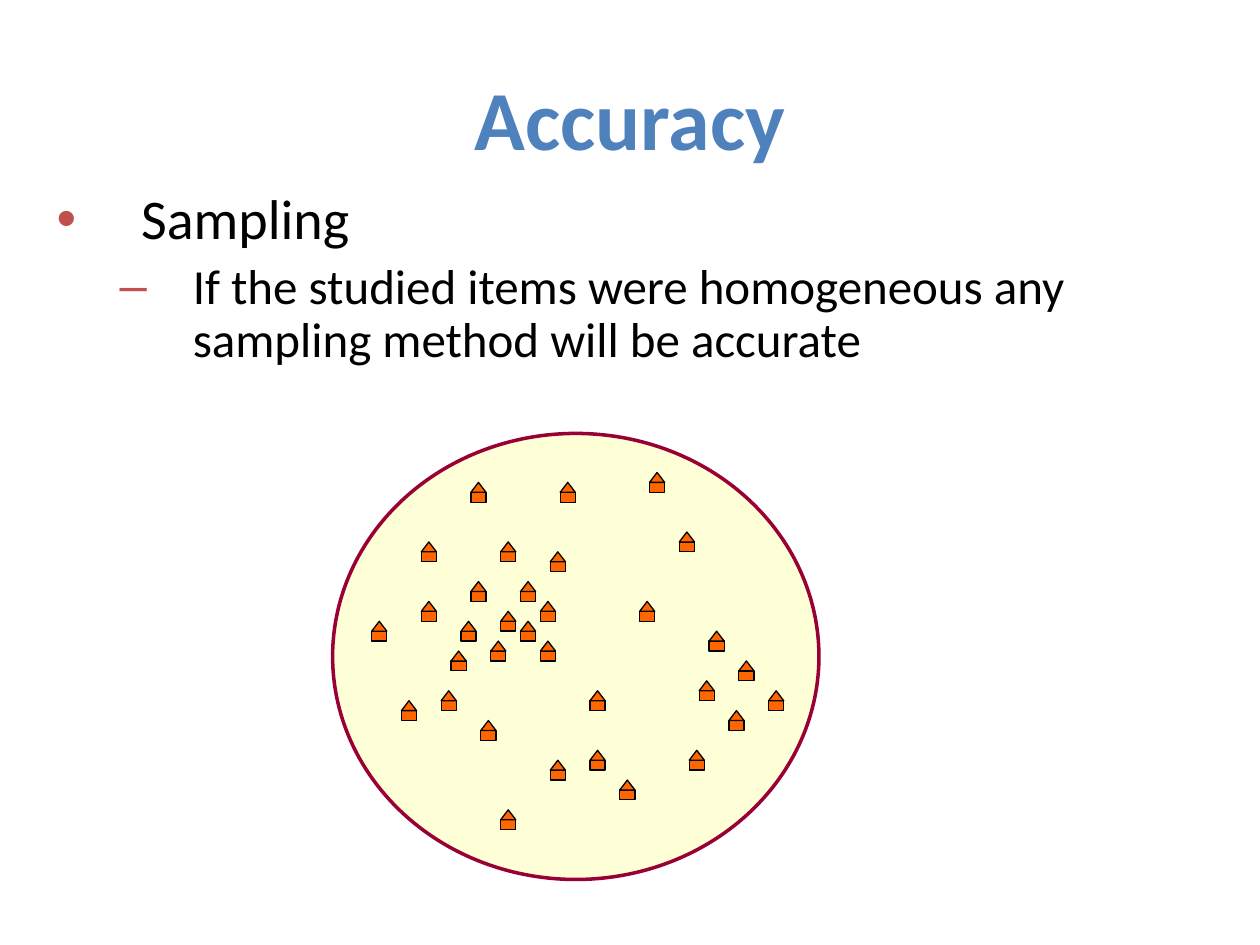
"""Build the Accuracy slide: sampling bullets above a field of scattered houses."""
from lxml import etree
from pptx import Presentation
from pptx.dml.color import RGBColor
from pptx.enum.shapes import MSO_SHAPE
from pptx.enum.text import MSO_ANCHOR, MSO_AUTO_SIZE, PP_ALIGN
from pptx.oxml.ns import qn
from pptx.util import Inches, Pt

OVAL, RECT, TRIANGLE = MSO_SHAPE.OVAL, MSO_SHAPE.RECTANGLE, MSO_SHAPE.ISOSCELES_TRIANGLE
CENTER, MIDDLE, TOP = PP_ALIGN.CENTER, MSO_ANCHOR.MIDDLE, MSO_ANCHOR.TOP
NO_FIT = MSO_AUTO_SIZE.NONE

THEME = {
    "font": "Calibri",
    "title": "4F81BD", "text": "000000", "bullet": "C0504D",
    "field": "FFFFD7", "field_line": "990033",
    "house": "FF6600", "house_line": "000000",
    "title_size": 48, "body_size": 32, "sub_size": 28,
}
PITCH = 3.15 / 40
GRID_LEFT, GRID_TOP = 2.95, 3.75
HOUSE_WIDTH = 0.12
HOUSES = [
    (27, 13), (19, 1), (0, 15), (10, 11), (13, 14), (8, 18), (17, 17), (3, 23),
    (13, 34), (32, 28), (10, 1), (13, 7), (15, 11), (22, 22), (18, 8), (33, 21),
    (36, 24), (28, 0), (17, 13), (31, 6), (15, 15), (34, 16), (37, 19), (40, 22),
    (9, 15), (5, 13), (5, 7), (11, 25), (7, 22), (18, 29), (12, 17), (22, 28),
    (25, 31),
]


def write(p, text, *, size, color, bold=False, align=None, level=0,
          margin=None, hang=0, bullet=None, spacing=None):
    """Put formatted text in a paragraph."""
    p.level, p.alignment, p.line_spacing = level, align, spacing
    if bullet:
        pPr = p._p.get_or_add_pPr()
        pPr.set("marL", str(Inches(margin)))
        pPr.set("indent", str(-Inches(hang)))
        clr = etree.SubElement(pPr, qn("a:buClr"))
        etree.SubElement(clr, qn("a:srgbClr"), val=bullet)
    r = p.add_run()
    r.text = text
    r.font.name, r.font.size, r.font.bold = THEME["font"], Pt(size), bold
    r.font.color.rgb = RGBColor.from_string(color)


def add_shape(shapes, kind, box, fill, line, width):
    """Add a filled, outlined preset shape without a shadow."""
    sp = shapes.add_shape(kind, *(Inches(v) for v in box))
    sp.shadow.inherit = False
    sp.fill.solid()
    sp.fill.fore_color.rgb = RGBColor.from_string(fill)
    sp.line.color.rgb = RGBColor.from_string(line)
    sp.line.width = Pt(width)


prs = Presentation()
prs.slide_width, prs.slide_height = Inches(10), Inches(7.5)
s = prs.slides.add_slide(prs.slide_layouts[1])
title, body = s.placeholders

for sp, box, anchor in ((title, (0.5, 0.3, 9, 1.25), MIDDLE),
                        (body, (0.35, 1.47, 9.65, 1.65), TOP)):
    sp.left, sp.top, sp.width, sp.height = (Inches(v) for v in box)
    tf = sp.text_frame
    tf.word_wrap, tf.auto_size, tf.vertical_anchor = True, NO_FIT, anchor

write(title.text_frame.paragraphs[0], "Accuracy", size=THEME["title_size"],
      color=THEME["title"], bold=True, align=CENTER)

tf = body.text_frame
write(tf.paragraphs[0], "Sampling", size=THEME["body_size"], color=THEME["text"],
      margin=0.67, hang=0.67, bullet=THEME["bullet"], spacing=0.9)
write(tf.add_paragraph(),
      "If the studied items were homogeneous any sampling method will be accurate",
      size=THEME["sub_size"], color=THEME["text"], level=1,
      margin=1.08, hang=0.58, bullet=THEME["bullet"], spacing=0.9)

add_shape(s.shapes, OVAL, (2.64, 3.44, 3.86, 3.54),
          THEME["field"], THEME["field_line"], 2)

for col, row in HOUSES:
    house = s.shapes.add_group_shape()
    x, y = GRID_LEFT + col * PITCH, GRID_TOP + row * PITCH
    for kind, top in ((RECT, y + PITCH), (TRIANGLE, y)):
        add_shape(house.shapes, kind, (x, top, HOUSE_WIDTH, PITCH),
                  THEME["house"], THEME["house_line"], 0.75)

prs.save("out.pptx")
